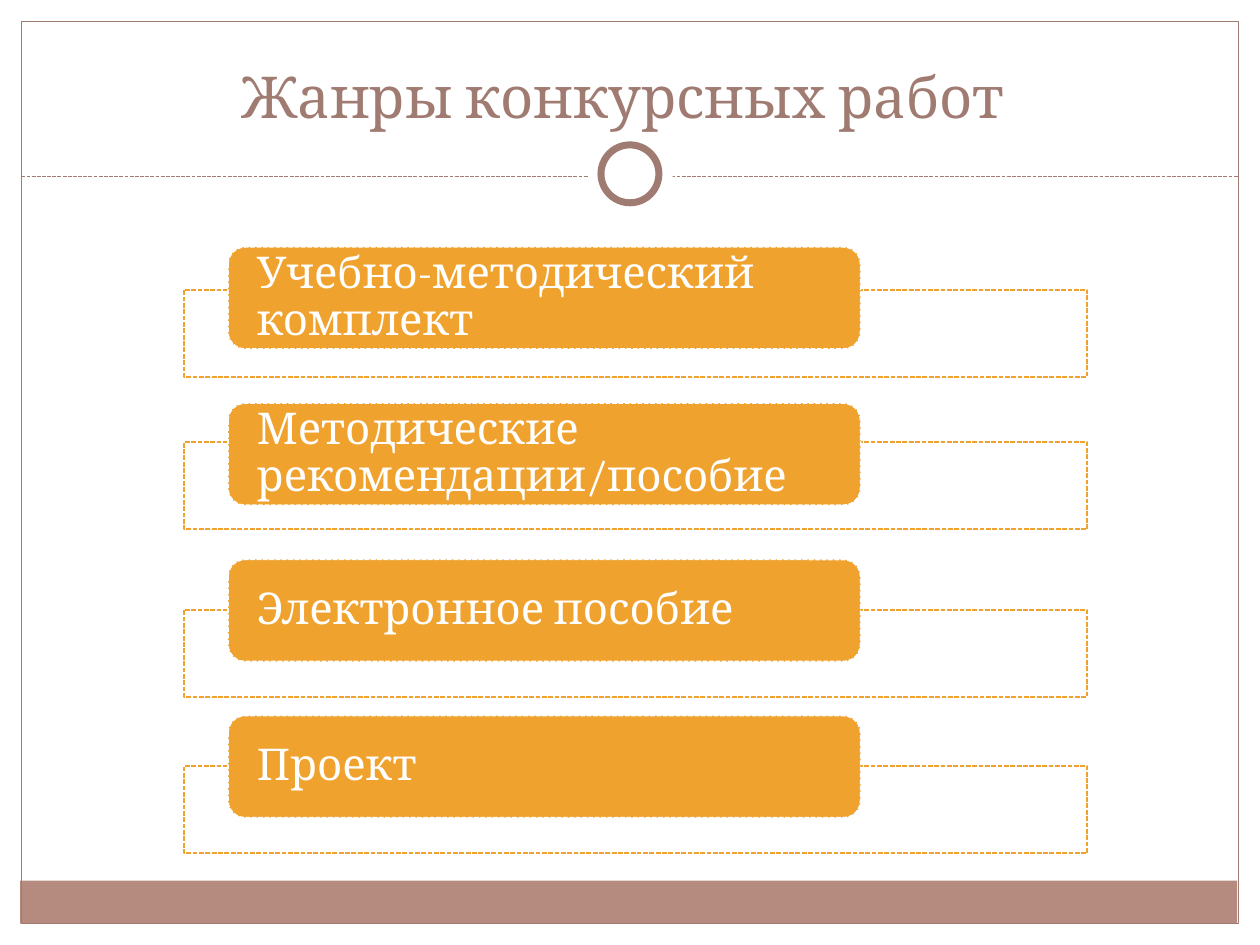
"""Build the slide listing the genres of competition entries."""
from dataclasses import dataclass

from lxml.etree import SubElement
from pptx import Presentation
from pptx.dml.color import RGBColor
from pptx.enum.dml import MSO_LINE
from pptx.enum.shapes import MSO_CONNECTOR, MSO_SHAPE
from pptx.enum.text import MSO_ANCHOR, MSO_AUTO_SIZE, PP_ALIGN
from pptx.oxml.ns import qn
from pptx.util import Inches, Pt

FONT = "Cambria"
BROWN, ROSE, ORANGE, WHITE = "A07B71", "B58B80", "F0A22E", "FFFFFF"
FIRST_TOP, STEP = 1.96, 1.24


@dataclass
class Genre:
    name: str
    frame_top: float


GENRES = [
    Genre("Учебно-методический комплект", 2.3),
    Genre("Методические рекомендации/пособие", 3.51),
    Genre("Электронное пособие", 4.84),
    Genre("Проект", 6.08),
]


def rgb(color: str) -> RGBColor:
    return RGBColor.from_string(color)


def set_line(line, color: str, width: float, dashed: bool = False) -> None:
    line.color.rgb = rgb(color)
    line.width = Pt(width)
    if dashed:
        line.dash_style = MSO_LINE.SQUARE_DOT


def add_box(s, kind, box: tuple, fill: str = "", line: str = "",
            width: float = 0.75, dashed: bool = False):
    sp = s.shapes.add_shape(kind, *map(Inches, box))
    sp.shadow.inherit = False
    if fill:
        sp.fill.solid()
        sp.fill.fore_color.rgb = rgb(fill)
    else:
        sp.fill.background()
    if line:
        set_line(sp.line, line, width, dashed)
    else:
        sp.line.fill.background()
    return sp


def write(tf, text: str, size: float, color: str, align) -> None:
    tf.text = text
    tf.word_wrap = True
    tf.auto_size = MSO_AUTO_SIZE.NONE
    p = tf.paragraphs[0]
    p.alignment = align
    font = p.runs[0].font
    font.name, font.size, font.color.rgb = FONT, Pt(size), rgb(color)


def add_decor(s) -> None:
    add_box(s, MSO_SHAPE.RECTANGLE, (0.16, 6.99, 9.66, 0.34), ROSE)
    add_box(s, MSO_SHAPE.RECTANGLE, (0.17, 0.17, 9.66, 7.16), line=BROWN)
    rule = s.shapes.add_connector(
        MSO_CONNECTOR.STRAIGHT, *map(Inches, (0.17, 1.4, 9.83, 1.4)))
    set_line(rule.line, BROWN, 0.75, True)
    SubElement(rule._element.spPr, qn("a:effectLst"))
    add_box(s, MSO_SHAPE.OVAL, (4.67, 1.05, 0.67, 0.67), WHITE)
    add_box(s, MSO_SHAPE.OVAL, (4.77, 1.15, 0.46, 0.46), WHITE, BROWN, 4)


def add_title(s, text: str) -> None:
    sp = s.shapes.title
    sp.left, sp.top, sp.width, sp.height = map(Inches, (0.33, 0.25, 9.33, 0.83))
    write(sp.text_frame, text, 33, BROWN, PP_ALIGN.CENTER)
    sp.text_frame.vertical_anchor = MSO_ANCHOR.BOTTOM


def add_genre(s, genre: Genre, top: float) -> None:
    add_box(s, MSO_SHAPE.RECTANGLE, (1.46, genre.frame_top, 7.17, 0.69),
            WHITE, ORANGE, 0.9, True)
    sp = add_box(s, MSO_SHAPE.ROUNDED_RECTANGLE, (1.81, top, 5.02, 0.81),
                 ORANGE, WHITE, 0.9, True)
    tf = sp.text_frame
    write(tf, genre.name, 25, WHITE, PP_ALIGN.LEFT)
    tf.vertical_anchor = MSO_ANCHOR.MIDDLE
    tf.margin_left = tf.margin_right = Inches(0.19)
    tf.margin_top = tf.margin_bottom = 0
    tf.paragraphs[0].line_spacing = 0.9


def main() -> None:
    prs = Presentation()
    prs.slide_width, prs.slide_height = Inches(10), Inches(7.5)
    s = prs.slides.add_slide(prs.slide_layouts[5])
    add_decor(s)
    add_title(s, "Жанры конкурсных работ ")
    for i, genre in enumerate(GENRES):
        add_genre(s, genre, FIRST_TOP + i * STEP)
    prs.save("out.pptx")


if __name__ == "__main__":
    main()
